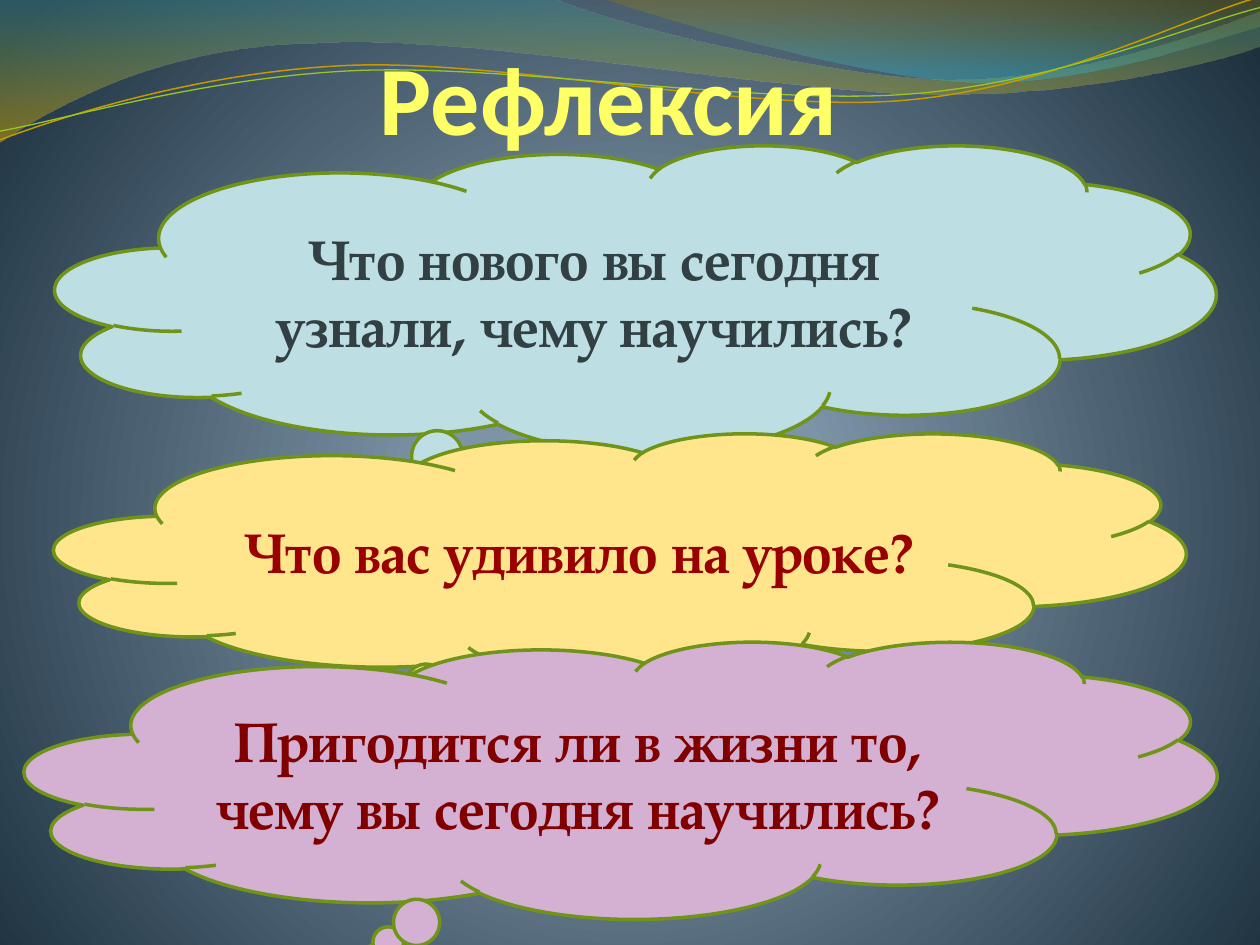
"""Build the reflection slide: three thought clouds under a wavy header."""
from itertools import chain
from lxml.etree import SubElement
from pptx import Presentation
from pptx.dml.color import RGBColor
from pptx.enum.shapes import MSO_SHAPE
from pptx.enum.text import MSO_ANCHOR, PP_ALIGN
from pptx.oxml import parse_xml
from pptx.oxml.ns import nsdecls, qn
from pptx.util import Pt


def color(hex_code):
    """Turn a hex string into a colour."""
    return RGBColor.from_string(hex_code)


def draw_wave(shapes, start, segments, close):
    """Draw an outline of straight (one point) and cubic (three point) segments."""
    builder = shapes.build_freeform(Pt(start[0]), Pt(start[1]), scale=1.0)
    builder.add_line_segments(
        [(Pt(x), Pt(y)) for x, y in chain.from_iterable(segments)], close=close)
    wave = builder.convert_to_shape()
    wave.shadow.inherit = False
    steps = iter(list(wave._element.iter(qn("a:lnTo"))))
    for segment in segments:
        first, *others = [next(steps) for _ in segment]
        if others:
            curve = parse_xml(f'<a:cubicBezTo {nsdecls("a")}/>')
            first.addprevious(curve)
            for step in (first, *others):
                curve.append(step[0])
                step.getparent().remove(step)
    return wave


prs = Presentation()
prs.slide_width, prs.slide_height = Pt(720), Pt(540)
slide = prs.slides.add_slide(prs.slide_layouts[6])

slide.background.fill.gradient()
backdrop = slide.background.fill._fill._gradFill
for child in list(backdrop):
    backdrop.remove(child)
stops = SubElement(backdrop, qn("a:gsLst"))
for position, shade in ((0, "809AAF"), (25, "7D94A6"), (100, "1C303E")):
    stop = SubElement(stops, qn("a:gs"), pos=str(position * 1000))
    SubElement(stop, qn("a:srgbClr"), val=shade)
glow = SubElement(backdrop, qn("a:path"), path="circle")
SubElement(glow, qn("a:fillToRect"), l="10000", t="110000", r="10000", b="100000")

bands = [
    ((0, -0.7),
     [((316.8, -0.7),),
      ((342.7, 12.2), (478.1, 45.4), (545.8, 45.4)),
      ((614.2, 45.4), (689.8, 18.7), (720, 6.5)),
      ((720.7, 25.9),),
      ((707.8, 31.7), (626.4, 54.7), (537.1, 54)),
      ((447.8, 54), (275, 20.2), (185, 24.5)),
      ((92.9, 25.2), (33.1, 59.8), (-0.7, 81.4))],
     [(0, "3B8890", 45), (100, "C99E00", 55)]),
    ((344.9, -0.7),
     [((366.5, 7.9), (491, 44.6), (553.7, 46.8)),
      ((616.3, 49.7), (691.9, 23), (720, 15.1)),
      ((720, 0),)],
     [(0, "A48100", 30), (80, "3EA9B4", 45)]),
]
for start, segments, shades in bands:
    band = draw_wave(slide.shapes, start, segments, True)
    band.line.fill.background()
    band.fill.background()
    stops = "".join(
        f'<a:gs pos="{position * 1000}"><a:srgbClr val="{shade}">'
        f'<a:alpha val="{opacity * 1000}"/></a:srgbClr></a:gs>'
        for position, shade, opacity in shades)
    gradient = parse_xml(
        f'<a:gradFill {nsdecls("a")}><a:gsLst>{stops}</a:gsLst>'
        '<a:lin ang="5400000" scaled="0"/></a:gradFill>')
    properties = band._element.spPr
    properties.replace(properties.find(qn("a:noFill")), gradient)

strands = [
    ((0, 79.9),
     [((34.6, 67), (113.8, 41), (199.4, 37.4)),
      ((284.4, 33.8), (427, 64.1), (513.4, 57.6)),
      ((599.8, 51.1), (675.4, 10.8), (718.6, -1.4))],
     "C49A00", 0.85),
    ((0, 74.9),
     [((33.8, 69.1), (118.1, 43.9), (203.8, 40.3)),
      ((290.2, 36.7), (429.8, 59.8), (516.2, 54)),
      ((601.9, 48.2), (677.5, 15.1), (720, 4.3))],
     "98C723", 0.75),
]
strand_pair = slide.shapes.add_group_shape()
for start, segments, shade, weight in strands:
    strand = draw_wave(strand_pair.shapes, start, segments, False)
    strand.fill.background()
    strand.line.color.rgb = color(shade)
    strand.line.width = Pt(weight)

heading = slide.shapes.add_textbox(Pt(41.76), Pt(15.12), Pt(612), Pt(73.44))
clouds = [
    (31.7, 82.8, 663.1, 175.7, "BDDFE3", "324043",
     "Что нового вы сегодня узнали, чему научились?"),
    (31, 247.5, 646.6, 141.8, "FFE68C", "990000", "Что вас удивило на уроке?"),
    (14.2, 366.5, 681.1, 158.4, "D4B0D2", "800000",
     "Пригодится ли в жизни то, чему вы сегодня научились?"),
]
texts = [(heading, "Рефлексия", "Calibri", 56, "FFFF66", MSO_ANCHOR.BOTTOM)]
for left, top, width, height, tint, ink, question in clouds:
    cloud = slide.shapes.add_shape(
        MSO_SHAPE.CLOUD_CALLOUT, Pt(left), Pt(top), Pt(width), Pt(height))
    cloud.shadow.inherit = False
    cloud.fill.solid()
    cloud.fill.fore_color.rgb = color(tint)
    cloud.line.color.rgb = color("70931A")
    cloud.line.width = Pt(2)
    texts.append((cloud, question, "TeX Gyre Pagella", 32, ink, MSO_ANCHOR.MIDDLE))

for holder, wording, typeface, size, ink, anchor in texts:
    frame = holder.text_frame
    frame.text = wording
    frame.word_wrap = True
    frame.vertical_anchor = anchor
    paragraph = frame.paragraphs[0]
    paragraph.alignment = PP_ALIGN.CENTER
    font = paragraph.runs[0].font
    font.name, font.size, font.bold = typeface, Pt(size), True
    font.color.rgb = color(ink)

margins = heading.text_frame
margins.margin_left = margins.margin_right = Pt(0)
margins.margin_top = margins.margin_bottom = Pt(0)

prs.save("out.pptx")
